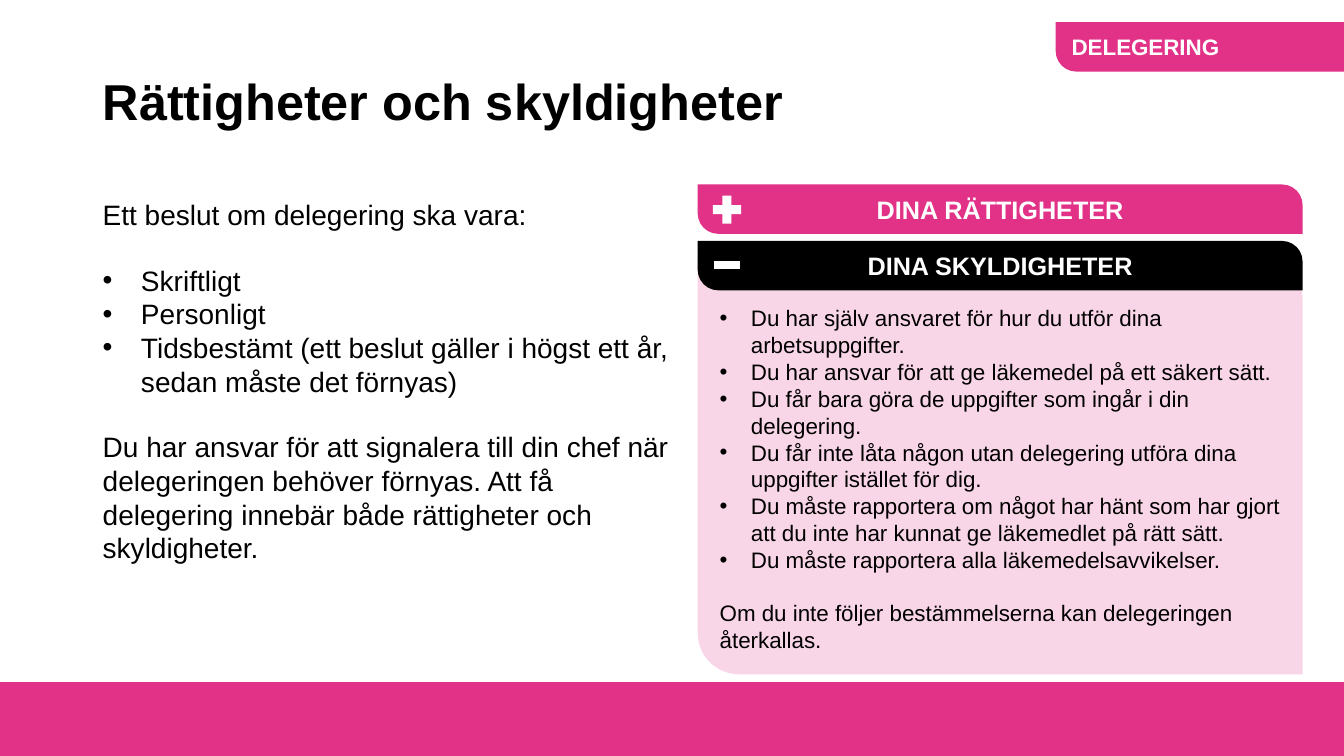
from lxml import etree
from pptx import Presentation
from pptx import util as u
from pptx.dml.color import RGBColor
from pptx.enum import shapes, text
from pptx.oxml.ns import qn

PINK, PALE, BLACK, WHITE = "E13288", "F9D6E7", "000000", "FFFFFF"
SHAPE = shapes.MSO_SHAPE
TOP, MIDDLE = text.MSO_ANCHOR.TOP, text.MSO_ANCHOR.MIDDLE
LEFT, CENTER = text.PP_ALIGN.LEFT, text.PP_ALIGN.CENTER

DECISION = ["Skriftligt", "Personligt",
            "Tidsbestämt (ett beslut gäller i högst ett år, sedan måste det förnyas)"]
DUTIES = [
    "Du har själv ansvaret för hur du utför dina arbetsuppgifter.",
    "Du har ansvar för att ge läkemedel på ett säkert sätt.",
    "Du får bara göra de uppgifter som ingår i din delegering.",
    "Du får inte låta någon utan delegering utföra dina uppgifter istället för dig.",
    "Du måste rapportera om något har hänt som har gjort att du inte har kunnat ge "
    "läkemedlet på rätt sätt.",
    "Du måste rapportera alla läkemedelsavvikelser.",
]


def color(value):
    return RGBColor.from_string(value)


class SlideBuilder:
    font = "Arial"

    def __init__(self, slide):
        self.slide = slide

    def shape(self, kind, left, top, width, height, fill, corner=None):
        shape = self.slide.shapes.add_shape(
            kind, u.Inches(left), u.Inches(top), u.Inches(width), u.Inches(height))
        shape.shadow.inherit = False
        shape.fill.solid()
        shape.fill.fore_color.rgb = color(fill)
        shape.line.fill.background()
        if corner is not None:
            shape.adjustments[0] = 0
            shape.adjustments[1] = corner
        return shape

    def text_box(self, left, top, width, height):
        return self.slide.shapes.add_textbox(
            u.Inches(left), u.Inches(top), u.Inches(width), u.Inches(height))

    def set_text(self, shape, paragraphs, size, ink=BLACK, bold=False, align=LEFT,
                 anchor=TOP, indent=0.0, spacing=None):
        """Fill a shape with (text, is_bullet, points_before) paragraphs."""
        frame = shape.text_frame
        frame.word_wrap = True
        frame.vertical_anchor = anchor
        for index, (words, is_bullet, before) in enumerate(paragraphs):
            paragraph = frame.add_paragraph() if index else frame.paragraphs[0]
            paragraph.text = words
            if is_bullet:
                self.bullet(paragraph, indent)
            paragraph.alignment = align
            if before:
                paragraph.space_before = u.Pt(before)
            if spacing:
                paragraph.line_spacing = spacing
            paragraph.font.name = self.font
            paragraph.font.size = u.Pt(size)
            paragraph.font.bold = bold
            paragraph.font.color.rgb = color(ink)

    def bullet(self, paragraph, indent):
        properties = paragraph._p.get_or_add_pPr()
        properties.set("marL", str(u.Inches(indent)))
        properties.set("indent", str(-u.Inches(indent)))
        etree.SubElement(properties, qn("a:buFont")).set("typeface", self.font)
        etree.SubElement(properties, qn("a:buChar")).set("char", "•")

    def banner(self, left, top, width, label, size, fill, align=CENTER):
        shape = self.shape(SHAPE.ROUND_2_DIAG_RECTANGLE, left, top, width, 0.49, fill, 0.417)
        self.set_text(shape, [(label, False, 0)], size, WHITE, True, align, MIDDLE)


def main():
    presentation = Presentation()
    presentation.slide_width = u.Inches(13.33)
    presentation.slide_height = u.Inches(7.5)
    builder = SlideBuilder(presentation.slides.add_slide(presentation.slide_layouts[6]))

    footer = builder.shape(SHAPE.RECTANGLE, 0, 6.77, 13.33, 0.73, PINK)
    footer.line.color.rgb = color(PINK)
    footer.line.width = u.Pt(1)

    duties = builder.shape(SHAPE.ROUND_2_DIAG_RECTANGLE, 6.92, 2.56, 6, 4.13, PALE, 0.099)
    duties.text_frame.margin_top = u.Inches(0.34)
    closing = "Om du inte följer bestämmelserna kan delegeringen återkallas."
    builder.set_text(duties, [(duty, True, 0) for duty in DUTIES] + [(closing, False, 18.4)],
                     16, indent=0.31)

    builder.set_text(builder.text_box(0.92, 0.71, 11.5, 1.1),
                     [("Rättigheter och skyldigheter", False, 0)], 36, bold=True, spacing=0.9)

    decision = [("Ett beslut om delegering ska vara:", False, 0)]
    decision += [(item, True, 0 if index else 23) for index, item in enumerate(DECISION)]
    decision.append(("Du har ansvar för att signalera till din chef när delegeringen behöver "
                     "förnyas. Att få delegering innebär både rättigheter och skyldigheter.",
                     False, 23))
    builder.set_text(builder.text_box(0.92, 1.91, 5.91, 3.8), decision, 20, indent=0.38)

    builder.banner(10.47, 0.22, 3.62, "DELEGERING", 16, PINK, LEFT)
    builder.banner(6.92, 1.83, 6, "DINA RÄTTIGHETER", 18, PINK)
    builder.shape(SHAPE.MATH_PLUS, 7.02, 1.89, 0.38, 0.38, WHITE)
    builder.banner(6.92, 2.39, 6, "DINA SKYLDIGHETER", 18, BLACK)
    builder.shape(SHAPE.MATH_MINUS, 7.03, 2.45, 0.36, 0.36, WHITE)

    presentation.save("out.pptx")


if __name__ == "__main__":
    main()
